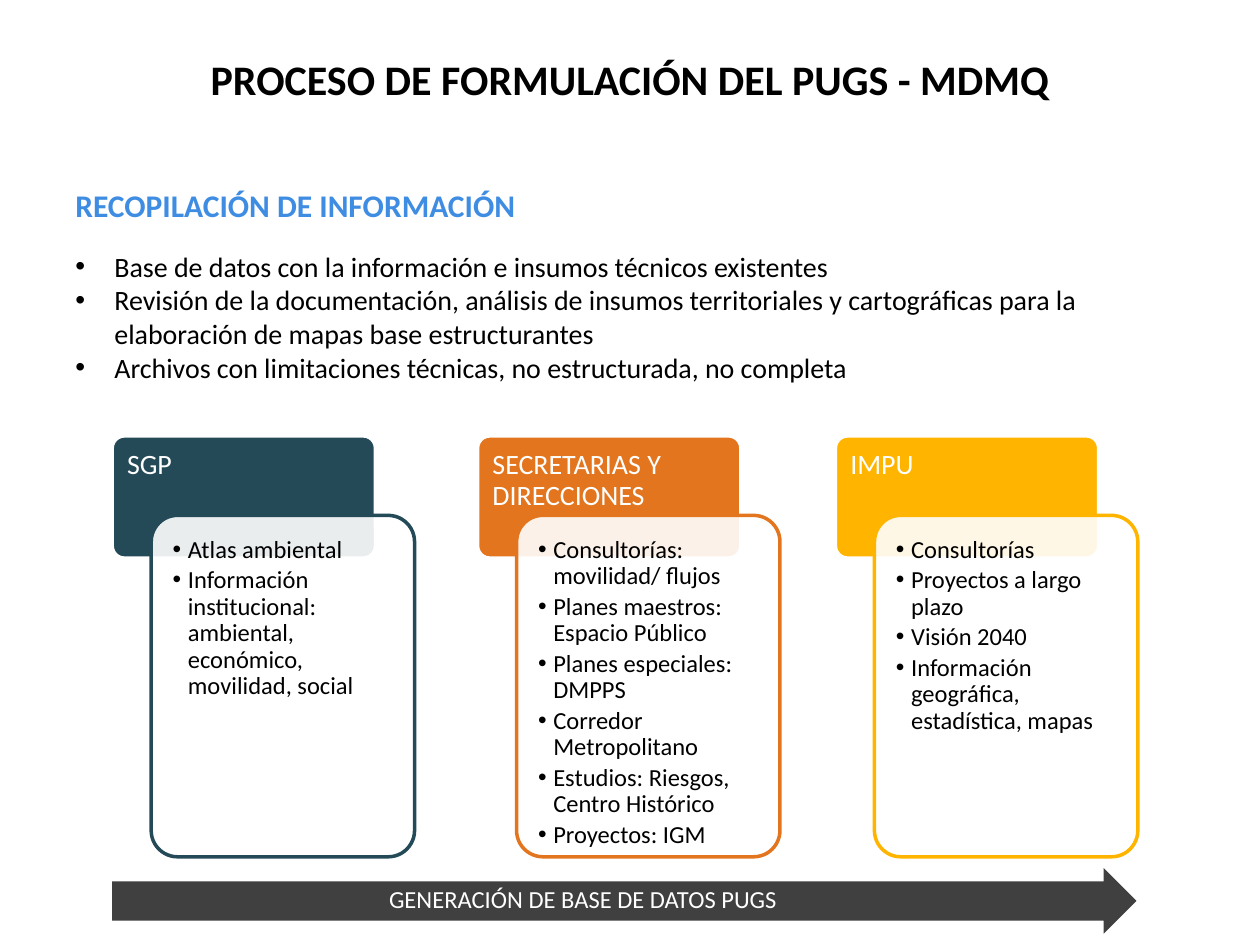
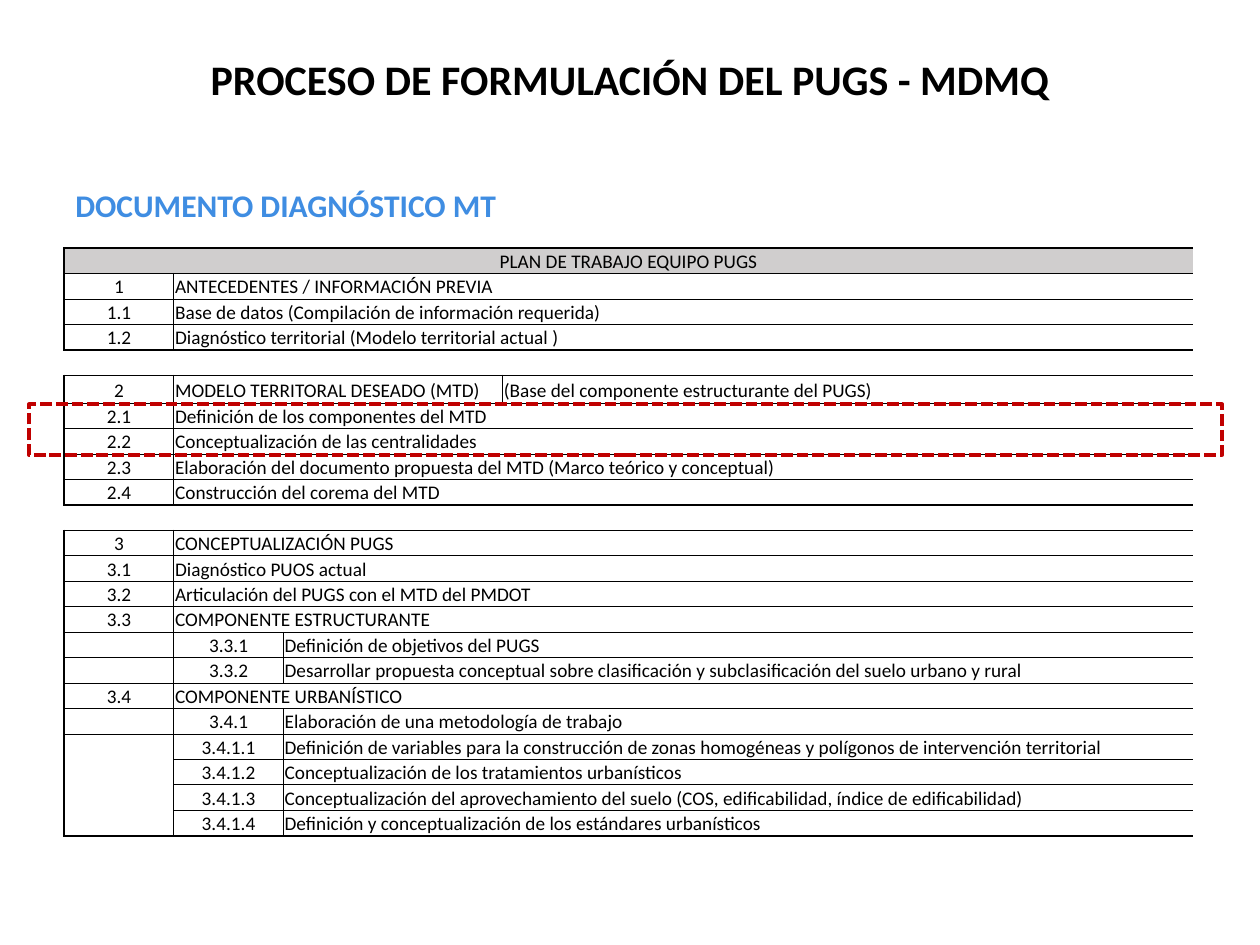
from lxml import etree
from pptx import Presentation
from pptx.dml.color import RGBColor
from pptx.enum.dml import MSO_LINE
from pptx.enum.shapes import MSO_SHAPE as SHAPE
from pptx.enum.text import MSO_ANCHOR as ANCHOR, PP_ALIGN as ALIGN
from pptx.oxml.ns import qn
from pptx.util import Inches, Pt

FONT = "Calibri"
BLACK, WHITE, BLUE = "000000", "FFFFFF", "3F8DE2"
GREY, DARK, RED = "D0CECE", "404040", "C00000"
NO_STYLE = "{2D5ABB26-0587-4C30-8999-92F81FD0307C}"
TITLE = "PROCESO DE FORMULACIÓN DEL PUGS - MDMQ"

INSUMOS = [
    "Base de datos con la información e insumos técnicos existentes",
    "Revisión de la documentación, análisis de insumos territoriales y cartográficas "
    "para la elaboración de mapas base estructurantes",
    "Archivos con limitaciones técnicas, no estructurada, no completa",
]

FUENTES = [
    (0.89, "244A58", "SGP", [
        "Atlas ambiental",
        "Información institucional: ambiental, económico, movilidad, social"]),
    (3.79, "E2751D", "SECRETARIAS Y DIRECCIONES", [
        "Consultorías: movilidad/ flujos",
        "Planes maestros: Espacio Público",
        "Planes especiales: DMPPS",
        "Corredor Metropolitano",
        "Estudios: Riesgos, Centro Histórico",
        "Proyectos: IGM"]),
    (6.63, "FFB400", "IMPU", [
        "Consultorías",
        "Proyectos a largo plazo",
        "Visión 2040",
        "Información geográfica, estadística, mapas"]),
]

PLAN = [
    [("1", "ANTECEDENTES / INFORMACIÓN PREVIA"),
     ("1.1", "Base de datos (Compilación de información requerida)"),
     ("1.2", "Diagnóstico territorial (Modelo territorial actual )")],
    [("2", "MODELO TERRITORAL DESEADO (MTD)",
      "(Base del componente estructurante del PUGS)"),
     ("2.1", "Definición de los componentes del MTD"),
     ("2.2", "Conceptualización de las centralidades"),
     ("2.3", "Elaboración del documento propuesta del MTD (Marco teórico y conceptual)"),
     ("2.4", "Construcción del corema del MTD")],
    [("3", "CONCEPTUALIZACIÓN PUGS"),
     ("3.1", "Diagnóstico PUOS actual"),
     ("3.2", "Articulación del PUGS con el MTD del PMDOT"),
     ("3.3", "COMPONENTE ESTRUCTURANTE"),
     ("", "3.3.1", "Definición de objetivos del PUGS"),
     ("", "3.3.2", "Desarrollar propuesta conceptual sobre clasificación y "
      "subclasificación del suelo urbano y rural"),
     ("3.4", "COMPONENTE URBANÍSTICO"),
     ("", "3.4.1", "Elaboración de una metodología de trabajo"),
     ("", "3.4.1.1", "Definición de variables para la construcción de zonas homogéneas "
      "y polígonos de intervención territorial"),
     ("", "3.4.1.2", "Conceptualización de los tratamientos urbanísticos"),
     ("", "3.4.1.3", "Conceptualización del aprovechamiento del suelo "
      "(COS, edificabilidad, índice de edificabilidad)"),
     ("", "3.4.1.4", "Definición y conceptualización de los estándares urbanísticos")],
]


def rgb(value):
    """Turn a hex string into a colour."""
    return RGBColor.from_string(value)


def sub(parent, tag, **attrs):
    """Append a DrawingML child element."""
    return etree.SubElement(parent, qn(tag), {k: str(v) for k, v in attrs.items()})


class Deck:
    """Hold the presentation, its style and the current slide."""

    def __init__(self):
        """Start a 4:3 presentation."""
        self.prs = Presentation()
        self.prs.slide_width, self.prs.slide_height = Inches(10), Inches(7.5)

    def slide(self, heading):
        """Add a slide with the shared title and its own heading."""
        self.s = self.prs.slides.add_slide(self.prs.slide_layouts[6])
        self.text((0.5, 0, 9, 1.25), [TITLE], 24, bold=True,
                  align=ALIGN.CENTER, anchor=ANCHOR.MIDDLE)
        self.text((0.5, 1.43, 9, 0.42), [heading], 18, BLUE, bold=True)

    def set_text(self, tf, lines, size, color=BLACK, bold=False, align=ALIGN.LEFT,
                 anchor=ANCHOR.TOP, indent=0, spacing=None, after=0):
        """Fill a text frame, with bullets where an indent is given."""
        tf.word_wrap, tf.vertical_anchor = True, anchor
        tf.text = "\n".join(lines)
        for p in tf.paragraphs:
            p.alignment, p.line_spacing, p.space_after = align, spacing, Pt(after)
            if indent:
                pPr = p._p.get_or_add_pPr()
                pPr.set("marL", str(Inches(indent)))
                pPr.set("indent", str(-Inches(indent)))
                sub(pPr, "a:buFont", typeface="Arial")
                sub(pPr, "a:buChar", char="•")
            for r in p.runs:
                r.font.name, r.font.size, r.font.bold = FONT, Pt(size), bold
                r.font.color.rgb = rgb(color)

    def text(self, box, lines, size, color=BLACK, **style):
        """Add a text box."""
        tb = self.s.shapes.add_textbox(*map(Inches, box))
        self.set_text(tb.text_frame, lines, size, color, **style)

    def shape(self, kind, box, fill=None, line=None, width=2, adj=(), alpha=None):
        """Add a preset shape."""
        sp = self.s.shapes.add_shape(kind, *map(Inches, box))
        sp.shadow.inherit = False
        for i, value in enumerate(adj):
            sp.adjustments[i] = value
        if fill:
            sp.fill.solid()
            sp.fill.fore_color.rgb = rgb(fill)
        else:
            sp.fill.background()
        if alpha:
            clr = sp._element.spPr.find(qn("a:solidFill"))[0]
            sub(clr, "a:alpha", val=alpha * 1000)
        if line:
            sp.line.color.rgb, sp.line.width = rgb(line), Pt(width)
        else:
            sp.line.fill.background()
        return sp

    def label(self, sp, lines, size, color, margins, **style):
        """Set text inside a shape with left, top, right and bottom margins."""
        tf = sp.text_frame
        tf.margin_left, tf.margin_top, tf.margin_right, tf.margin_bottom = map(Inches, margins)
        self.set_text(tf, lines, size, color, spacing=0.9, **style)

    def card(self, left, color, name, items):
        """Add a coloured tab with an overlapping list of items."""
        tab = self.shape(SHAPE.ROUNDED_RECTANGLE, (left, 3.46, 2.09, 0.97),
                         color, WHITE, adj=[0.1])
        self.label(tab, [name], 16, WHITE, (0.09, 0.09, 0.09, 0.07))
        body = self.shape(SHAPE.ROUNDED_RECTANGLE, (left + 0.31, 4.09, 2.09, 2.71),
                          WHITE, color, adj=[0.1], alpha=90)
        self.label(body, items, 14, BLACK, [0.11] * 4, indent=0.12, after=2.3)

    def borders(self, cell, **widths):
        """Draw the given cell sides in black."""
        tcPr = cell._tc.get_or_add_tcPr()
        sides = [side for side in "LRTB" if widths[side]]
        for i, side in enumerate(sides):
            ln = sub(tcPr, f"a:ln{side}", w=Pt(widths[side]))
            sub(sub(ln, "a:solidFill"), "a:srgbClr", val=BLACK)
            tcPr.insert(i, ln)

    def row(self, table, i, texts, starts, edges, open_edges=(0, 0)):
        """Fill one table row, each text spanning up to the next start."""
        last = len(table.columns) - 1
        ends = [c - 1 for c in starts[1:]] + [last]
        for text, c, end in zip(texts, starts, ends):
            cell = table.cell(i, c)
            if end > c:
                cell.merge(table.cell(i, end))
            header = i == 0
            if text:
                centred = header or text[0].isdigit()
                self.set_text(cell.text_frame, [text], 11,
                              align=ALIGN.CENTER if centred else ALIGN.LEFT)
            cell.vertical_anchor = ANCHOR.MIDDLE if header else ANCHOR.BOTTOM
            if header:
                cell.fill.solid()
                cell.fill.fore_color.rgb = rgb(GREY)
            top, bottom = edges if text else open_edges
            for k in range(c, end + 1):
                self.borders(table.cell(i, k), T=top, B=bottom,
                             L=(1 if c == 0 else 0.5) if k == c else 0,
                             R=(1 if end == last else 0.5) if k == end else 0)

    def plan(self, box, header, blocks, widths, tall):
        """Add the work plan table, with a blank row between blocks."""
        rows = sum(map(len, blocks)) + len(blocks)
        gf = self.s.shapes.add_table(rows, len(widths), *map(Inches, box))
        table = gf.table
        table.first_row = table.horz_banding = False
        next(gf._element.iter(qn("a:tableStyleId"))).text = NO_STYLE
        for column, width in zip(table.columns, widths):
            column.width = Inches(width)
        for row in table.rows:
            row.height = Inches((box[3] - tall) / (rows - 1))
        for cell in table.iter_cells():
            cell.margin_left = cell.margin_top = cell.margin_right = Inches(0.01)
            cell.margin_bottom = 0
            cell.fill.background()
            sub(cell.text_frame.paragraphs[0]._p, "a:endParaRPr", sz=1100)
        self.row(table, 0, [header], [0], (1, 1))
        i = 1
        for block in blocks:
            for n, texts in enumerate(block):
                final = n == len(block) - 1
                edges = (0.5 if n else 1, 1 if final else 0.5)
                open_edges = (0.5 if block[n - 1][0] else 0,
                              1 if final else 0.5 if block[n + 1][0] else 0)
                starts = list(range(len(texts)))
                if texts[0] and len(texts) == 3:
                    starts = [0, 1, 4]
                    table.rows[i].height = Inches(tall)
                self.row(table, i, texts, starts, edges, open_edges)
                i += 1
            i += 1


def main():
    """Build both slides and save them."""
    deck = Deck()

    deck.slide("RECOPILACIÓN DE INFORMACIÓN")
    deck.text((0.5, 1.93, 9, 1.18), INSUMOS, 16, indent=0.31)
    for fuente in FUENTES:
        deck.card(*fuente)
    arrow = deck.shape(SHAPE.RIGHT_ARROW, (0.89, 6.89, 8.13, 0.52), DARK, adj=[0.6, 0.5])
    deck.label(arrow, ["GENERACIÓN DE BASE DE DATOS PUGS"], 14, WHITE, (0.11, 0, 0.61, 0),
               align=ALIGN.CENTER, anchor=ANCHOR.MIDDLE)

    deck.slide("DOCUMENTO DIAGNÓSTICO MT")
    deck.plan((0.51, 1.97, 8.98, 4.67), "PLAN DE TRABAJO EQUIPO PUGS", PLAN,
              [0.87] * 7 + [2.87], 0.22)
    focus = deck.shape(SHAPE.RECTANGLE, (0.23, 3.21, 9.47, 0.4), line=RED, width=2.25)
    focus.line.dash_style = MSO_LINE.SQUARE_DOT

    deck.prs.save("out.pptx")


if __name__ == "__main__":
    main()
